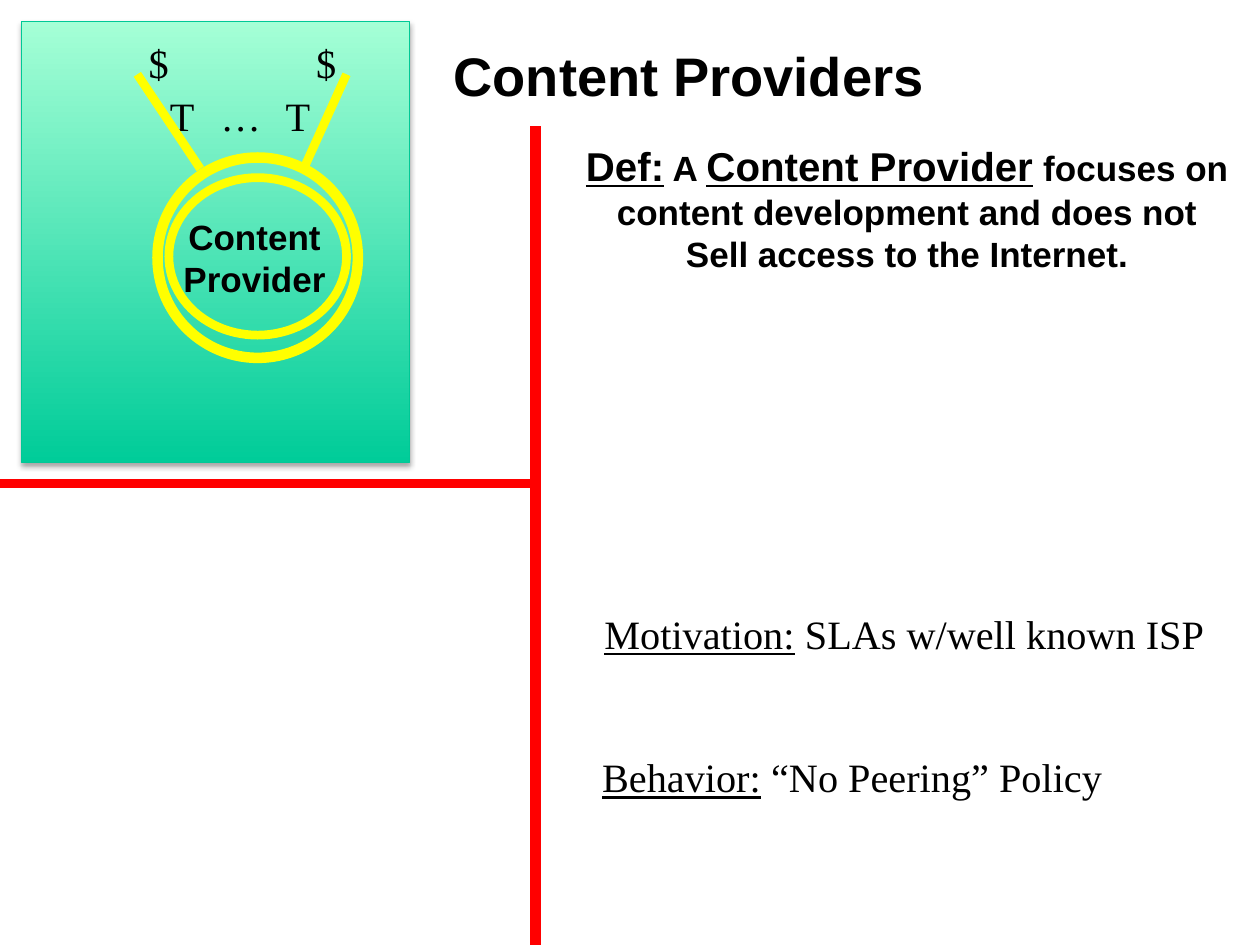
from lxml import etree
from pptx import Presentation
from pptx.dml.color import RGBColor
from pptx.enum.shapes import MSO_CONNECTOR, MSO_SHAPE
from pptx.enum.text import MSO_ANCHOR, MSO_AUTO_SIZE, PP_ALIGN
from pptx.oxml import parse_xml
from pptx.oxml.ns import nsdecls, qn
from pptx.util import Inches, Pt

SANS, SERIF = "Arial", "Times New Roman"
BLACK, YELLOW, RED = "000000", "FFFF00", "FF0000"
PANEL_TOP, PANEL_BOTTOM, PANEL_EDGE = "A5FFD6", "00CC99", "00C896"


def rgb(value):
    return RGBColor.from_string(value)


def inches(box):
    return [Inches(length) for length in box]


def write(shape, paragraphs, font, bold=False, right_inset=0):
    """Fill a shape with centred paragraphs of (text, size, underline) runs."""
    frame = shape.text_frame
    frame.margin_left = frame.margin_top = frame.margin_bottom = 0
    frame.margin_right = Inches(right_inset)
    frame.word_wrap = False
    frame.auto_size = MSO_AUTO_SIZE.NONE
    frame.vertical_anchor = MSO_ANCHOR.MIDDLE
    for index, runs in enumerate(paragraphs):
        paragraph = frame.add_paragraph() if index else frame.paragraphs[0]
        paragraph.alignment = PP_ALIGN.CENTER
        for text, size, underline in runs:
            run = paragraph.add_run()
            run.text = text
            run.font.name = font
            run.font.size = Pt(size)
            run.font.bold = bold
            run.font.underline = underline
            run.font.color.rgb = rgb(BLACK)


def add_label(slide, box, paragraphs, font=SERIF, **options):
    write(slide.shapes.add_textbox(*inches(box)), paragraphs, font, **options)


def add_rule(slide, start, end, color, width):
    rule = slide.shapes.add_connector(MSO_CONNECTOR.STRAIGHT, *inches(start + end))
    rule.line.color.rgb = rgb(color)
    rule.line.width = Pt(width)
    etree.SubElement(rule._element.spPr, qn("a:effectLst"))


def add_ring(slide, box, width):
    ring = slide.shapes.add_shape(MSO_SHAPE.OVAL, *inches(box))
    ring.shadow.inherit = False
    ring.fill.background()
    ring.line.color.rgb = rgb(YELLOW)
    ring.line.width = Pt(width)


def add_panel(slide, box):
    panel = slide.shapes.add_shape(MSO_SHAPE.RECTANGLE, *inches(box))
    panel.fill.gradient()
    panel.fill.gradient_angle = 90
    for stop, color, position in zip(panel.fill.gradient_stops,
                                     (PANEL_BOTTOM, PANEL_TOP), (0, 1)):
        stop.color.rgb = rgb(color)
        stop.position = position
    panel.line.color.rgb = rgb(PANEL_EDGE)
    panel.line.width = Pt(0.75)
    panel._element.spPr.append(parse_xml(
        f'<a:effectLst {nsdecls("a")}>'
        f'<a:outerShdw blurRad="{Pt(3.1)}" dist="{Pt(1.8)}" dir="5400000" rotWithShape="0">'
        f'<a:srgbClr val="{BLACK}"><a:alpha val="35000"/></a:srgbClr>'
        '</a:outerShdw></a:effectLst>'))


def add_provider_diagram(slide, box):
    left, top, _, _ = box
    add_panel(slide, box)

    # Paid transit links above the provider
    for symbol, x, y, width in (("T", 1.18, 0.55, 0.19), ("T", 2.1, 0.55, 0.19),
                                ("$", 2.34, 0.13, 0.16), ("$", 1.01, 0.13, 0.16),
                                ("…", 1.58, 0.55, 0.32)):
        add_label(slide, (left + x, top + y, width, 0.39), [[(symbol, 23, False)]])

    # Provider: double ring around its name
    add_ring(slide, (left + 1.17, top + 1.24, 1.41, 1.25), 5)
    add_label(slide, (left + 1.28, top + 1.54, 1.19, 0.67),
              [[(word, 20, False)] for word in ("Content", "Provider")],
              SANS, bold=True, right_inset=0.05)
    add_ring(slide, (left + 1.08, top + 1.08, 1.59, 1.59), 6)

    # Uplinks
    for ring_x, outer_x in ((1.42, 0.92), (2.24, 2.58)):
        add_rule(slide, (left + ring_x, top + 1.17), (left + outer_x, top + 0.42), YELLOW, 5)


def add_title(slide, box):
    title = slide.shapes.title
    title.left, title.top, title.width, title.height = inches(box)
    write(title, [[("Content Providers", 31, False)]], SANS, bold=True)


def add_definition(slide, box):
    add_label(slide, box, [
        [("Def:", 23, True), (" A ", 20, False),
         ("Content Provider", 23, True), (" focuses on", 20, False)],
        [("content development and does not", 20, False)],
        [("Sell access to the Internet.", 20, False)],
    ], SANS, bold=True)


def add_trait(slide, box, heading, detail):
    add_label(slide, box, [[(heading, 23, True), (detail, 23, False)]])


def add_dividers(slide, x, y, top, bottom):
    add_rule(slide, (0, y), (x, y), RED, 5)
    add_rule(slide, (x, top), (x, bottom), RED, 6)


def main():
    deck = Presentation()
    deck.slide_width, deck.slide_height = Inches(10), Inches(7.5)
    slide = deck.slides.add_slide(deck.slide_layouts.get_by_name("Title Only"))

    add_provider_diagram(slide, (0.17, 0.17, 3.08, 3.5))
    add_title(slide, (3.58, 0.33, 3.77, 0.52))
    add_definition(slide, (4.63, 1.12, 5.14, 1.06))
    add_trait(slide, (4.78, 4.83, 4.8, 0.39), "Motivation:", " SLAs w/well known ISP")
    add_trait(slide, (4.76, 5.97, 4.01, 0.39), "Behavior:", " “No Peering” Policy")
    add_dividers(slide, x=4.25, y=3.84, top=1, bottom=7.5)

    deck.save("out.pptx")


if __name__ == "__main__":
    main()
